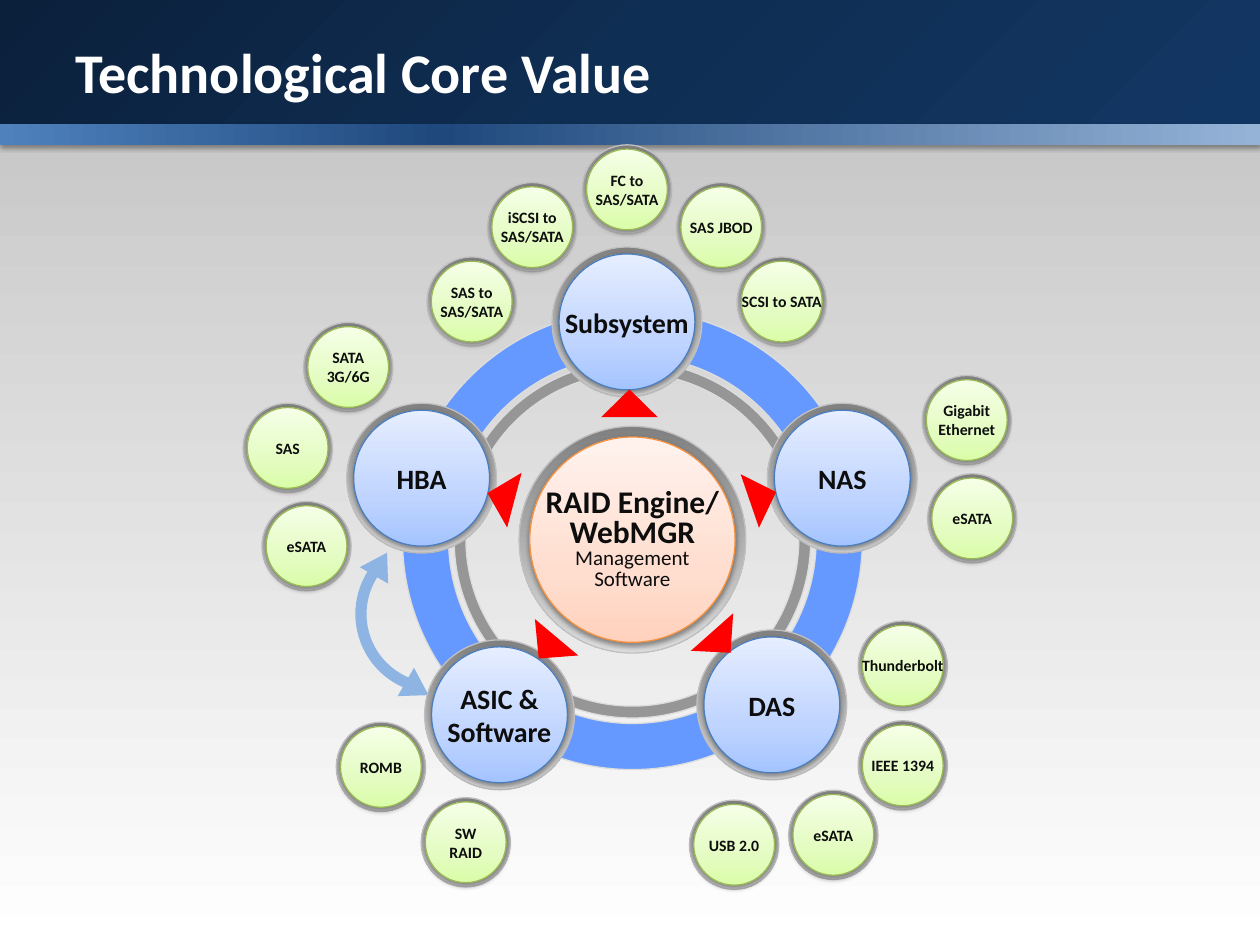
from typing import NamedTuple

from lxml.etree import SubElement
from pptx import Presentation
from pptx.dml.color import RGBColor
from pptx.enum.shapes import MSO_SHAPE as Preset
from pptx.enum.text import MSO_ANCHOR as Anchor, PP_ALIGN as Align
from pptx.oxml.ns import qn
from pptx.util import Cm, Pt

WHITE = RGBColor(0xFF, 0xFF, 0xFF)
BLACK = RGBColor(0x00, 0x00, 0x00)
INK = RGBColor(0x0D, 0x0D, 0x0D)
RED = RGBColor(0xFF, 0x00, 0x00)
SKY = RGBColor(0x8E, 0xB4, 0xE3)
RING_BLUE = RGBColor(0x66, 0x99, 0xFF)
RING_GREY = RGBColor(0x96, 0x96, 0x96)
PALE_GREY = RGBColor(0xDD, 0xDD, 0xDD)
SILVER = RGBColor(0xC0, 0xC0, 0xC0)
BLUE_EDGE = RGBColor(0x4B, 0x7E, 0xBC)
GREEN_EDGE = RGBColor(0x98, 0xB9, 0x55)
ORANGE_EDGE = RGBColor(0xF6, 0x92, 0x40)

Stops = tuple[tuple[int, RGBColor], ...]
BACKDROP: Stops = ((0, WHITE), (100, RGBColor(0xBF, 0xBF, 0xBF)))
HEADER: Stops = ((0, RGBColor(0x0B, 0x20, 0x3B)), (50, RGBColor(0x0F, 0x2E, 0x53)),
                 (100, RGBColor(0x12, 0x36, 0x63)))
STRIPE: Stops = ((0, RGBColor(0x4F, 0x81, 0xBD)), (35, RGBColor(0x1F, 0x49, 0x7D)),
                 (100, RGBColor(0x95, 0xB3, 0xD7)))
RIM: Stops = ((0, RGBColor(0x80, 0x80, 0x80)), (100, PALE_GREY))
BLUE: Stops = ((0, RGBColor(0xA4, 0xC4, 0xFF)), (35, RGBColor(0xBF, 0xD4, 0xFF)),
               (100, RGBColor(0xE6, 0xEE, 0xFF)))
GREEN: Stops = ((0, RGBColor(0xDA, 0xFD, 0xA7)), (35, RGBColor(0xE4, 0xFC, 0xC2)),
                (100, RGBColor(0xF5, 0xFF, 0xE7)))
ORANGE: Stops = ((0, RGBColor(0xFF, 0xD2, 0xBD)), (35, RGBColor(0xFF, 0xDE, 0xD0)),
                 (100, RGBColor(0xFF, 0xF2, 0xED)))


class Style(NamedTuple):
    rim: float
    face: float
    stops: Stops
    edge: RGBColor
    spacing: float = 1.0


class Line(NamedTuple):
    text: str
    size: int
    bold: bool = True


class Badge(NamedTuple):
    x: float
    y: float
    text: str


class Pointer(NamedTuple):
    x: float
    y: float
    turn: float


HUB = Style(3.02, 2.74, BLUE, BLUE_EDGE)
SATELLITE = Style(1.8, 1.63, GREEN, GREEN_EDGE)
CORE = Style(4.57, 4.14, ORANGE, ORANGE_EDGE, 0.8)
CENTER = (12.75, 10.88)

HUBS = (
    Badge(8.5, 9.64, "HBA"),
    Badge(12.64, 6.49, "Subsystem"),
    Badge(16.98, 9.64, "NAS"),
    Badge(15.56, 14.21, "DAS"),
    Badge(10.07, 14.41, "ASIC &\nSoftware"),
)
SATELLITES = (
    Badge(9.51, 6.08, "SAS to\nSAS/SATA"),
    Badge(10.73, 4.58, "iSCSI to\nSAS/SATA"),
    Badge(12.64, 3.82, "FC to\nSAS/SATA"),
    Badge(14.54, 4.58, "SAS JBOD"),
    Badge(15.76, 6.08, "SCSI to SATA"),
    Badge(19.49, 8.47, "Gigabit\nEthernet"),
    Badge(19.6, 10.45, "eSATA"),
    Badge(18.2, 13.42, "Thunderbolt"),
    Badge(18.2, 15.43, "IEEE 1394"),
    Badge(16.8, 16.83, "eSATA"),
    Badge(14.8, 17.03, "USB 2.0"),
    Badge(9.39, 16.98, "SW\nRAID"),
    Badge(7.68, 15.46, "ROMB"),
    Badge(6.18, 11.01, "eSATA"),
    Badge(5.8, 9.03, "SAS"),
    Badge(7.02, 7.4, "SATA\n3G/6G"),
)
CORE_LINES = (Line("RAID Engine/", 18), Line("WebMGR", 18),
              Line("Management", 12, False), Line("Software", 12, False))
POINTERS = (Pointer(10.1, 10.01, 284.8), Pointer(11.04, 13.06, 220),
            Pointer(14.54, 12.95, 138.4), Pointer(15.38, 10.01, 71.1),
            Pointer(12.69, 8.13, 0))
ARC_TIPS = (Pointer(8.41, 13.88, 120), Pointer(7.67, 11.37, 30))


def add_centered(page, preset, x: float, y: float, width: float, height: float):
    shape = page.shapes.add_shape(preset, Cm(x - width / 2), Cm(y - height / 2),
                                  Cm(width), Cm(height))
    shape.shadow.inherit = False
    shape.line.fill.background()
    return shape


def paint(shape, color: RGBColor) -> None:
    shape.fill.solid()
    shape.fill.fore_color.rgb = color


def outline(shape, color: RGBColor) -> None:
    shape.line.color.rgb = color
    shape.line.width = Pt(0.75)


def blend(shape, stops: Stops, angle: int) -> None:
    shape.fill.gradient()
    shape.fill.gradient_angle = (360 - angle) % 360
    listing = shape._element.spPr.find(qn("a:gradFill")).find(qn("a:gsLst"))
    for old in list(listing):
        listing.remove(old)
    for position, color in stops:
        stop = SubElement(listing, qn("a:gs"), pos=str(position * 1000))
        SubElement(stop, qn("a:srgbClr"), val=str(color))


def cast_shadow(shape) -> None:
    effects = shape._element.spPr.find(qn("a:effectLst"))
    shadow = SubElement(effects, qn("a:outerShdw"), blurRad=str(Pt(3.1)),
                        dist=str(Pt(1.6)), dir="5400000", rotWithShape="0")
    color = SubElement(shadow, qn("a:srgbClr"), val=str(BLACK))
    SubElement(color, qn("a:alpha"), val="38000")


def write(box, lines, color: RGBColor, align: Align, spacing: float = 1.0) -> None:
    frame = box.text_frame
    frame.word_wrap = False
    frame.vertical_anchor = Anchor.MIDDLE
    for index, line in enumerate(lines):
        para = frame.add_paragraph() if index else frame.paragraphs[0]
        para.alignment = align
        para.line_spacing = spacing
        span = para.add_run()
        span.text = line.text
        span.font.name = "Calibri"
        span.font.size = Pt(line.size)
        span.font.bold = line.bold
        span.font.color.rgb = color


def add_bar(page, top: float, height: float, stops: Stops, angle: int):
    bar = add_centered(page, Preset.RECTANGLE, 12.7, top + height / 2, 25.4, height)
    blend(bar, stops, angle)
    return bar


def add_ring(page, diameter: float, thickness: float, color: RGBColor) -> None:
    ring = add_centered(page, Preset.DONUT, *CENTER, diameter, diameter)
    ring.adjustments[0] = thickness / diameter
    paint(ring, color)
    outline(ring, PALE_GREY)


def add_badge(page, x: float, y: float, style: Style, lines) -> None:
    rim = add_centered(page, Preset.OVAL, x, y, style.rim, style.rim)
    blend(rim, RIM, 90)
    outline(rim, SILVER)
    face = add_centered(page, Preset.OVAL, x, y, style.face, style.face)
    blend(face, style.stops, 270)
    outline(face, style.edge)
    cast_shadow(face)
    write(face, lines, INK, Align.CENTER, style.spacing)


def add_pointers(page, pointers, width: float, height: float, color: RGBColor) -> None:
    for pointer in pointers:
        tip = add_centered(page, Preset.ISOSCELES_TRIANGLE, pointer.x, pointer.y, width, height)
        tip.rotation = pointer.turn
        paint(tip, color)


def add_arc(page) -> None:
    arc = add_centered(page, Preset.BLOCK_ARC, 8.78, 12.38, 3.23, 3.23)
    arc.adjustments[0] = 107 * 0.6
    arc.adjustments[1] = 222 * 0.6
    arc.adjustments[2] = 0.07
    paint(arc, SKY)
    add_pointers(page, ARC_TIPS, 0.66, 0.53, SKY)


def main() -> None:
    deck = Presentation()
    deck.slide_width, deck.slide_height = Cm(25.4), Cm(19.05)
    page = deck.slides.add_slide(deck.slide_layouts[6])

    add_bar(page, 0, 19.05, BACKDROP, 270)
    cast_shadow(add_bar(page, 0, 2.51, HEADER, 45))
    cast_shadow(add_bar(page, 2.51, 0.41, STRIPE, 0))
    title = page.shapes.add_textbox(Cm(1.27), Cm(0.53), Cm(16.23), Cm(1.8))
    write(title, [Line("Technological Core Value", 32)], WHITE, Align.LEFT)
    title.text_frame.word_wrap = True

    add_ring(page, 9.27, 0.93, RING_BLUE)
    add_ring(page, 7.19, 0.24, RING_GREY)
    add_arc(page)
    for badges, style, size in ((HUBS, HUB, 16), (SATELLITES, SATELLITE, 9)):
        for badge in badges:
            lines = [Line(text, size) for text in badge.text.split("\n")]
            add_badge(page, badge.x, badge.y, style, lines)
    add_badge(page, *CENTER, CORE, CORE_LINES)
    add_pointers(page, POINTERS, 1.14, 0.56, RED)

    deck.save("out.pptx")


if __name__ == "__main__":
    main()
